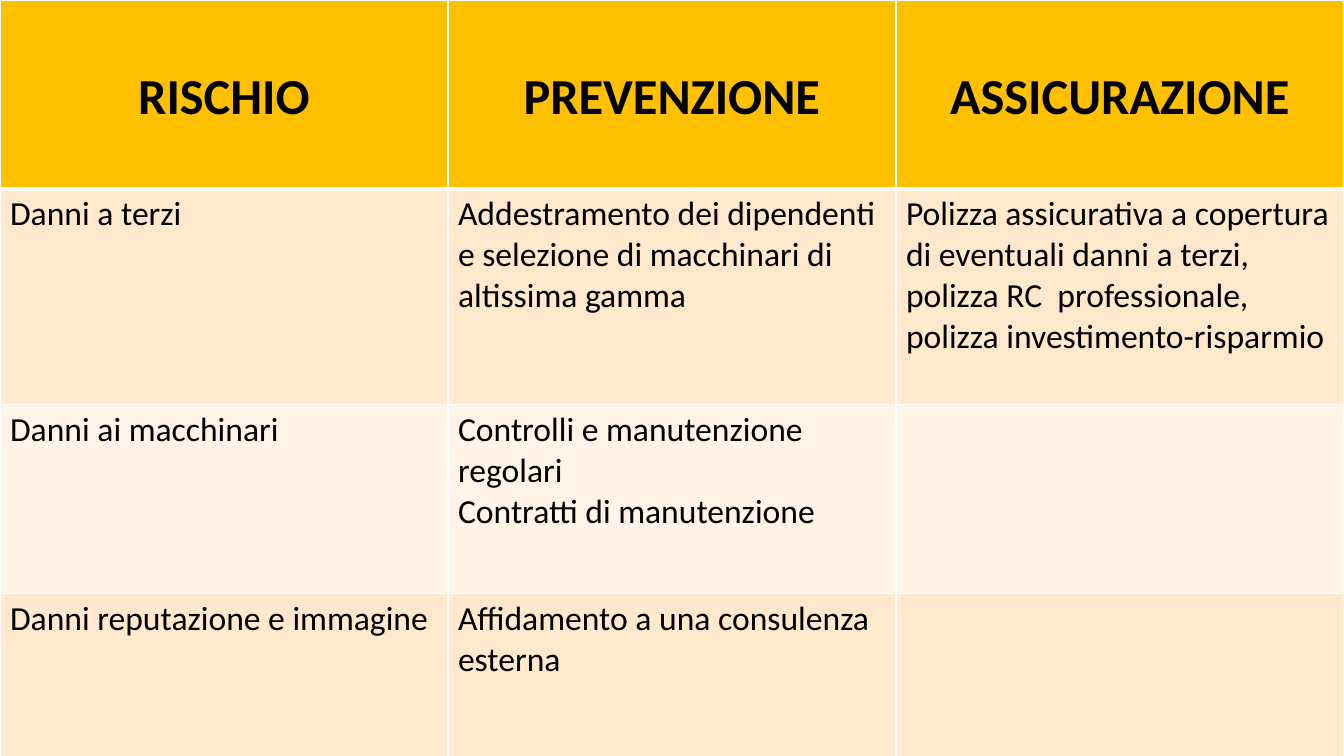
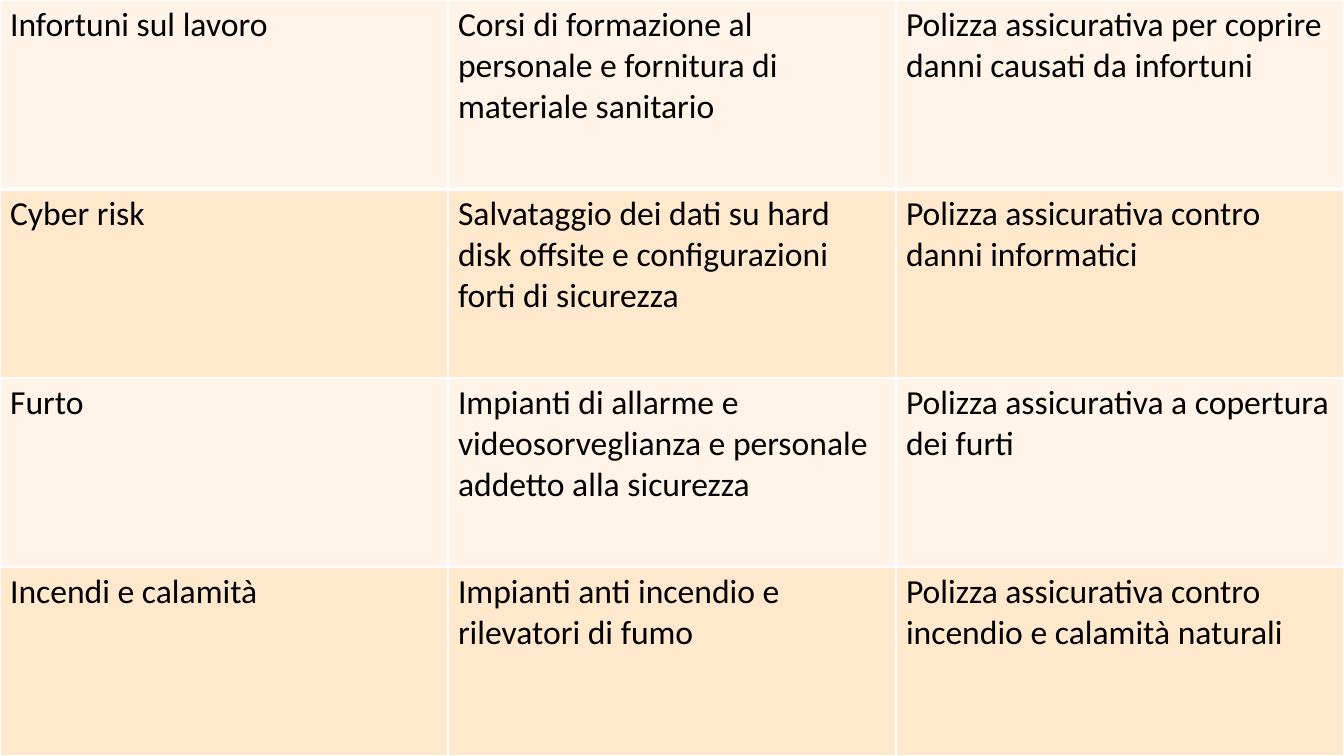
from dataclasses import dataclass

from lxml import etree
from pptx import Presentation
from pptx.dml.color import RGBColor
from pptx.enum.text import PP_ALIGN
from pptx.oxml.ns import qn
from pptx.util import Pt

CENTER, LEFT = PP_ALIGN.CENTER, PP_ALIGN.LEFT


@dataclass(frozen=True)
class Theme:
    font: str = "Calibri"
    text: str = "000000"
    header_fill: str = "FFC000"
    dark_band: str = "FFE8CC"
    light_band: str = "FFF4E7"
    border: str = "FFFFFF"
    header_size: float = 36
    body_size: float = 24
    header_spacing: float = 2
    thin: float = 1
    thick: float = 3


@dataclass(frozen=True)
class Row:
    cells: tuple[str, ...]
    height: float = 135
    header: bool = False


THEME = Theme()
SLIDE_W, SLIDE_H = 960, 540

# Table content, one list of rows per slide; a newline starts a paragraph
SLIDES = [
    [
        Row(("RISCHIO", "PREVENZIONE", "ASSICURAZIONE"), header=True),
        Row(("Danni a terzi",
             "Addestramento dei dipendenti e selezione di macchinari di altissima gamma",
             "Polizza assicurativa a copertura di eventuali danni a terzi, "
             "polizza RC  professionale, polizza investimento-risparmio"), height=154),
        Row(("Danni ai macchinari",
             "Controlli e manutenzione regolari\nContratti di manutenzione", "")),
        Row(("Danni reputazione e immagine",
             "Affidamento a una consulenza esterna", "")),
    ],
    [
        Row(("Infortuni sul lavoro",
             "Corsi di formazione al personale e fornitura di materiale sanitario",
             "Polizza assicurativa per coprire danni causati da infortuni")),
        Row(("Cyber risk",
             "Salvataggio dei dati su hard disk offsite e configurazioni forti di sicurezza",
             "Polizza assicurativa contro danni informatici")),
        Row(("Furto",
             "Impianti di allarme e videosorveglianza e personale addetto alla sicurezza",
             "Polizza assicurativa a copertura dei furti")),
        Row(("Incendi e calamità",
             "Impianti anti incendio e rilevatori di fumo",
             "Polizza assicurativa contro incendio e calamità naturali")),
    ],
]


def set_borders(cell, top: float, bottom: float) -> None:
    """Draw the four cell borders; the sides are always thin."""
    tc_pr = cell._tc.get_or_add_tcPr()
    widths = {"a:lnL": THEME.thin, "a:lnR": THEME.thin, "a:lnT": top, "a:lnB": bottom}
    for i, (tag, width) in enumerate(widths.items()):
        ln = etree.Element(qn(tag), w=str(Pt(width)))
        fill = etree.SubElement(ln, qn("a:solidFill"))
        etree.SubElement(fill, qn("a:srgbClr"), val=THEME.border)
        tc_pr.insert(i, ln)


def write_text(cell, text: str, header: bool) -> None:
    tf = cell.text_frame
    for i, line in enumerate(text.split("\n")):
        p = tf.add_paragraph() if i else tf.paragraphs[0]
        p.alignment = CENTER if header else LEFT
        if header:
            p.line_spacing = THEME.header_spacing
        if not line:
            continue
        r = p.add_run()
        r.text = line
        r.font.name = THEME.font
        r.font.size = Pt(THEME.header_size if header else THEME.body_size)
        r.font.bold = header
        r.font.color.rgb = RGBColor.from_string(THEME.text)


def row_fill(index: int, header: bool) -> str:
    if header:
        return THEME.header_fill
    return THEME.dark_band if index % 2 else THEME.light_band


def add_risk_table(s, rows: list[Row]) -> None:
    n_cols = len(rows[0].cells)
    height = sum(row.height for row in rows)
    table = s.shapes.add_table(len(rows), n_cols, Pt(0), Pt(0),
                               Pt(SLIDE_W), Pt(height)).table
    table.first_row = table.horz_banding = False
    for col in table.columns:
        col.width = Pt(SLIDE_W / n_cols)
    for i, row in enumerate(rows):
        table.rows[i].height = Pt(row.height)
        for j, text in enumerate(row.cells):
            cell = table.cell(i, j)
            cell.fill.solid()
            cell.fill.fore_color.rgb = RGBColor.from_string(row_fill(i, row.header))
            # A thick rule separates the first row from the second
            set_borders(cell, top=THEME.thick if i == 1 else THEME.thin,
                        bottom=THEME.thick if i == 0 else THEME.thin)
            write_text(cell, text, row.header)


def main() -> None:
    prs = Presentation()
    prs.slide_width, prs.slide_height = Pt(SLIDE_W), Pt(SLIDE_H)
    blank = prs.slide_layouts[6]
    for rows in SLIDES:
        add_risk_table(prs.slides.add_slide(blank), rows)
    prs.save("out.pptx")


if __name__ == "__main__":
    main()
